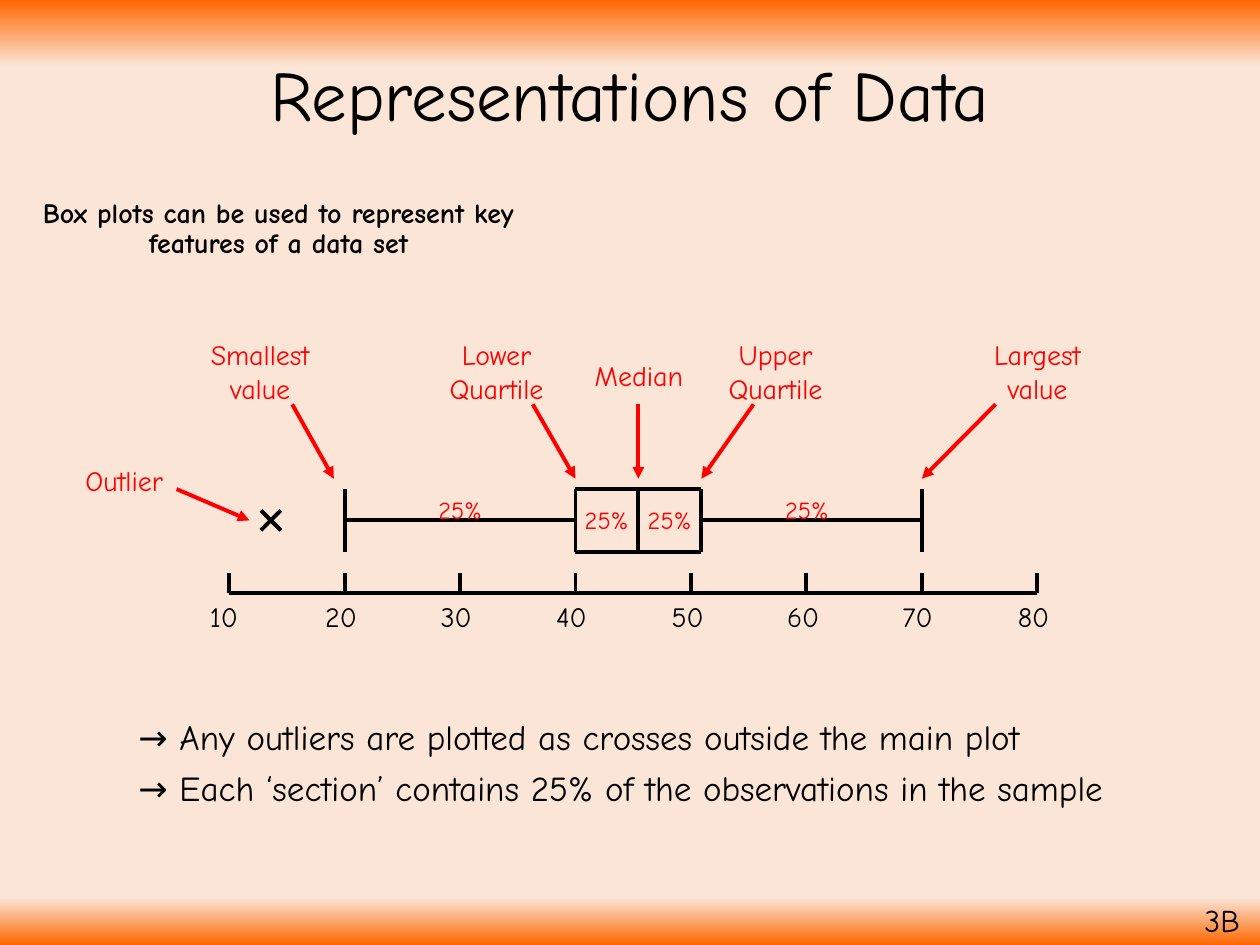
from copy import deepcopy
from typing import NamedTuple

from lxml.etree import SubElement
from pptx import Presentation
from pptx.dml.color import RGBColor
from pptx.enum.shapes import MSO_CONNECTOR as Connector
from pptx.enum.text import MSO_ANCHOR as Anchor, PP_ALIGN as Align
from pptx.oxml.ns import qn
from pptx.util import Cm, Pt

ORANGE = RGBColor(0xFF, 0x66, 0x00)
PEACH = RGBColor(0xFB, 0xE5, 0xD6)
RED = RGBColor(0xFF, 0x00, 0x00)
BLACK = RGBColor(0x00, 0x00, 0x00)
FONT = "Comic Neue"

AXIS_LEFT, AXIS_Y, TICK_TOP = 4.62, 11.96, 11.56
CM_PER_UNIT = 16.29 / 70
BOX_TOP, BOX_MIDDLE, BOX_BOTTOM = 9.86, 10.49, 11.13
ARROW_TOP, ARROW_TIP = 8.15, 9.65
SMALLEST, LOWER, MEDIAN, UPPER, LARGEST = 20, 40, 45.45, 50.9, 70


class Label(NamedTuple):
    text: str
    left: float
    top: float
    width: float
    height: float
    size: float = 16
    color: RGBColor = RED
    align: Align = Align.CENTER
    bold: bool = False
    anchor: Anchor = Anchor.TOP
    line_spacing: float = 1.0
    space_before: float = 0
    wrap: bool = True


class Line(NamedTuple):
    x1: float
    y1: float
    x2: float
    y2: float
    color: RGBColor = BLACK
    arrow: bool = False


def axis_x(value: float) -> float:
    return AXIS_LEFT + (value - 10) * CM_PER_UNIT


def pointer(x1: float, x2: float, y1: float = ARROW_TOP, y2: float = ARROW_TIP) -> Line:
    return Line(x1, y1, x2, y2, RED, True)


def draw_label(slide, label: Label) -> None:
    box = slide.shapes.add_textbox(
        Cm(label.left), Cm(label.top), Cm(label.width), Cm(label.height)
    )
    frame = box.text_frame
    frame.word_wrap = label.wrap
    frame.vertical_anchor = label.anchor
    frame.text = label.text
    for paragraph in frame.paragraphs:
        paragraph.alignment = label.align
        paragraph.line_spacing = label.line_spacing
        paragraph.space_before = Pt(label.space_before)
        paragraph.font.name = FONT
        paragraph.font.size = Pt(label.size)
        paragraph.font.bold = label.bold
        paragraph.font.color.rgb = label.color


def draw_line(slide, line: Line) -> None:
    connector = slide.shapes.add_connector(
        Connector.STRAIGHT, Cm(line.x1), Cm(line.y1), Cm(line.x2), Cm(line.y2)
    )
    connector.line.color.rgb = line.color
    connector.line.width = Pt(2.25)
    properties = connector.element.spPr
    if line.arrow:
        SubElement(properties.find(qn("a:ln")), qn("a:tailEnd"), type="triangle")
    SubElement(properties, qn("a:effectLst"))


def paint_background(slide) -> None:
    fill = slide.background.fill
    fill.gradient()
    fill.gradient_angle = 270
    stops = next(slide.element.iter(qn("a:gsLst")))
    for _ in range(2):
        stops.append(deepcopy(stops[0]))
    bands = [(0, ORANGE), (0.07, PEACH), (0.95, PEACH), (1, ORANGE)]
    for stop, (position, color) in zip(fill.gradient_stops, bands):
        stop.position = position
        stop.color.rgb = color


def main() -> None:
    """Build the slide that explains the parts of a box plot."""
    deck = Presentation()
    deck.slide_width, deck.slide_height = Cm(25.4), Cm(19.05)
    slide = deck.slides.add_slide(deck.slide_layouts[6])
    paint_background(slide)

    tick_values = range(10, 81, 10)
    axis = [Line(axis_x(10), AXIS_Y, axis_x(80), AXIS_Y)]
    ticks = [Line(axis_x(v), AXIS_Y, axis_x(v), TICK_TOP) for v in tick_values]
    uprights = [
        Line(axis_x(v), BOX_BOTTOM, axis_x(v), BOX_TOP)
        for v in (SMALLEST, LOWER, MEDIAN, UPPER, LARGEST)
    ]
    horizontals = [
        Line(axis_x(start), y, axis_x(end), y)
        for start, end, y in (
            (SMALLEST, LOWER, BOX_MIDDLE),
            (UPPER, LARGEST, BOX_MIDDLE),
            (LOWER, UPPER, BOX_TOP),
            (LOWER, UPPER, BOX_BOTTOM),
        )
    ]
    outlier_cross = [Line(5.26, 10.29, 5.66, 10.69), Line(5.66, 10.29, 5.26, 10.69)]
    pointers = [
        pointer(5.89, 6.73),
        pointer(10.74, axis_x(LOWER)),
        pointer(axis_x(MEDIAN), axis_x(MEDIAN)),
        pointer(15.19, axis_x(UPPER)),
        pointer(20.07, axis_x(LARGEST)),
        pointer(3.56, 5.03, BOX_TOP, BOX_MIDDLE),
    ]
    for line in axis + ticks + uprights + horizontals + outlier_cross + pointers:
        draw_line(slide, line)

    headings = [
        Label("Representations of Data", 1.75, 0.61, 21.9, 2.77, 40.5, BLACK,
              anchor=Anchor.MIDDLE, line_spacing=0.9),
        Label("Box plots can be used to represent key features of a data set",
              0.41, 3.89, 10.41, 1.6, 16, BLACK, bold=True, line_spacing=0.9),
    ]
    features = [
        Label("Smallest value", 3.76, 6.68, 2.97, 1.63),
        Label("Lower Quartile", 8.64, 6.68, 2.74, 1.63),
        Label("Median", 11.61, 7.11, 2.54, 0.94),
        Label("Upper Quartile", 14.15, 6.68, 2.97, 1.63),
        Label("Largest value", 19.43, 6.68, 2.97, 1.63),
        Label("Outlier", 1.02, 9.22, 2.97, 0.94),
    ]
    sections = [
        Label("25%", left, top, 1.7, 0.84, 14)
        for left, top in ((8.43, 9.86), (11.38, 10.06), (12.65, 10.06), (15.42, 9.86))
    ]
    scale = [
        Label(str(v), axis_x(v) - 0.64, AXIS_Y, 1.27, 0.94, 16, BLACK, Align.LEFT)
        for v in tick_values
    ]
    notes = Label(
        "→ Any outliers are plotted as crosses outside the main plot\n"
        "→ Each ‘section’ contains 25% of the observations in the sample",
        2.54, 14.47, 21.27, 2.2, 20, BLACK, Align.LEFT,
        line_spacing=0.8, space_before=10,
    )
    chapter = Label("3B", 24.03, 18.03, 1.32, 1.02, 18, BLACK, Align.LEFT, wrap=False)
    for label in headings + features + sections + scale + [notes, chapter]:
        draw_label(slide, label)

    deck.save("out.pptx")


if __name__ == "__main__":
    main()
